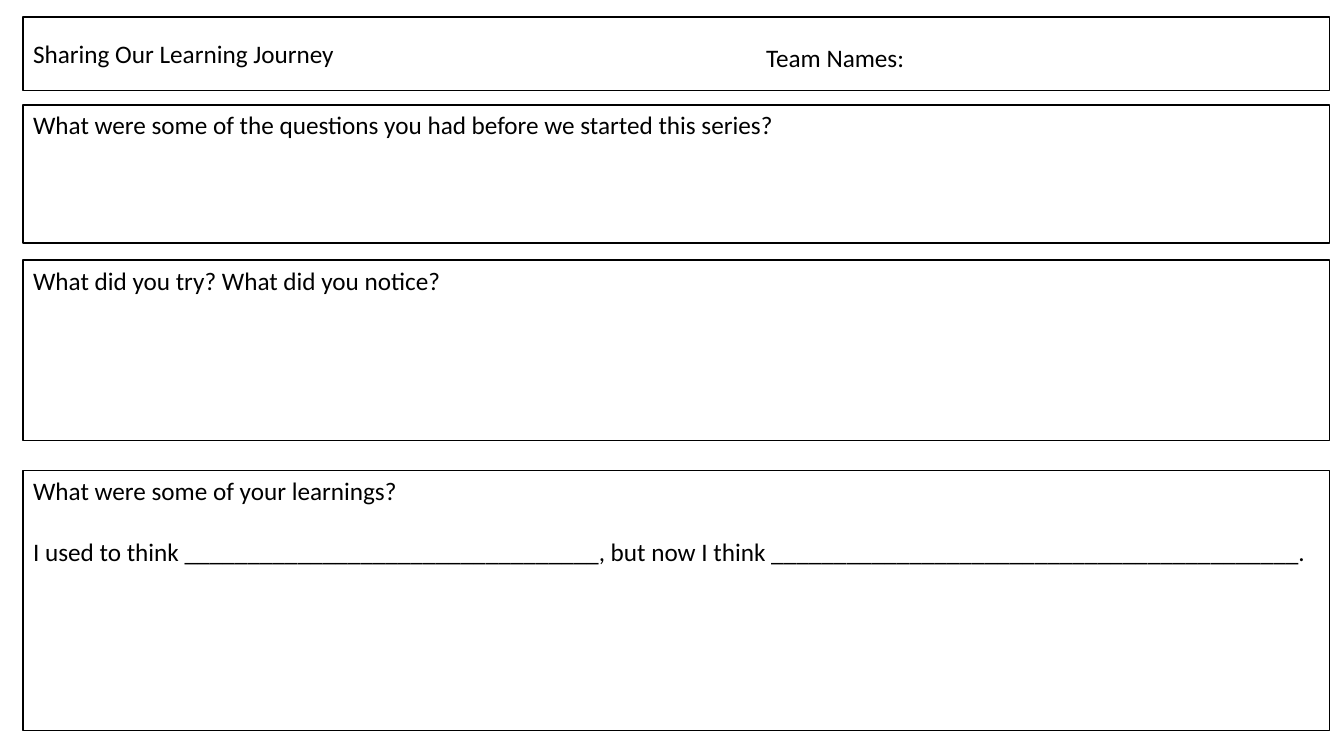
"""Build a one-page worksheet for sharing a team's learning journey."""
from pptx import Presentation
from pptx.dml.color import RGBColor
from pptx.enum.shapes import MSO_SHAPE
from pptx.enum.text import MSO_ANCHOR, MSO_AUTO_SIZE, PP_ALIGN
from pptx.util import Inches, Pt

RECTANGLE = MSO_SHAPE.RECTANGLE
TOP, MIDDLE = MSO_ANCHOR.TOP, MSO_ANCHOR.MIDDLE
FIT_SHAPE = MSO_AUTO_SIZE.SHAPE_TO_FIT_TEXT
LEFT = PP_ALIGN.LEFT
BLACK = RGBColor(0x00, 0x00, 0x00)
WHITE = RGBColor(0xFF, 0xFF, 0xFF)
BOX_LEFT, BOX_WIDTH = Inches(0.23), Inches(12.96)
LINE_GAP = Pt(22)


def write_lines(text_frame, lines):
    for index, line in enumerate(lines):
        paragraph = text_frame.add_paragraph() if index else text_frame.paragraphs[0]
        paragraph.alignment = LEFT
        if index:
            paragraph.space_before = LINE_GAP
        run = paragraph.add_run()
        run.text = line
        run.font.name = "Calibri"
        run.font.size = Pt(18)
        run.font.color.rgb = BLACK


presentation = Presentation()
presentation.slide_width = Inches(13.33)
presentation.slide_height = Inches(7.5)
slide = presentation.slides.add_slide(presentation.slide_layouts[6])
slide.background.fill.solid()
slide.background.fill.fore_color.rgb = WHITE

sections = [
    (0.17, 0.73, MIDDLE, ["Sharing Our Learning Journey"]),
    (1.04, 1.37, TOP, ["What were some of the questions you had before we started this series?"]),
    (2.58, 1.79, TOP, ["What did you try? What did you notice?"]),
    (4.67, 2.58, TOP, [
        "What were some of your learnings?",
        f"I used to think {'_' * 33}, but now I think {'_' * 42}.",
    ]),
]
for top, height, anchor, lines in sections:
    box = slide.shapes.add_shape(RECTANGLE, BOX_LEFT, Inches(top), BOX_WIDTH, Inches(height))
    box.shadow.inherit = False
    box.fill.background()
    box.line.color.rgb = BLACK
    box.line.width = Pt(1)
    box.text_frame.word_wrap = True
    box.text_frame.vertical_anchor = anchor
    write_lines(box.text_frame, lines)

team_names = slide.shapes.add_textbox(Inches(7.5), Inches(0.37), Inches(1.59), Inches(0.4))
team_names.text_frame.word_wrap = False
team_names.text_frame.auto_size = FIT_SHAPE
write_lines(team_names.text_frame, ["Team Names:"])

presentation.save("out.pptx")
